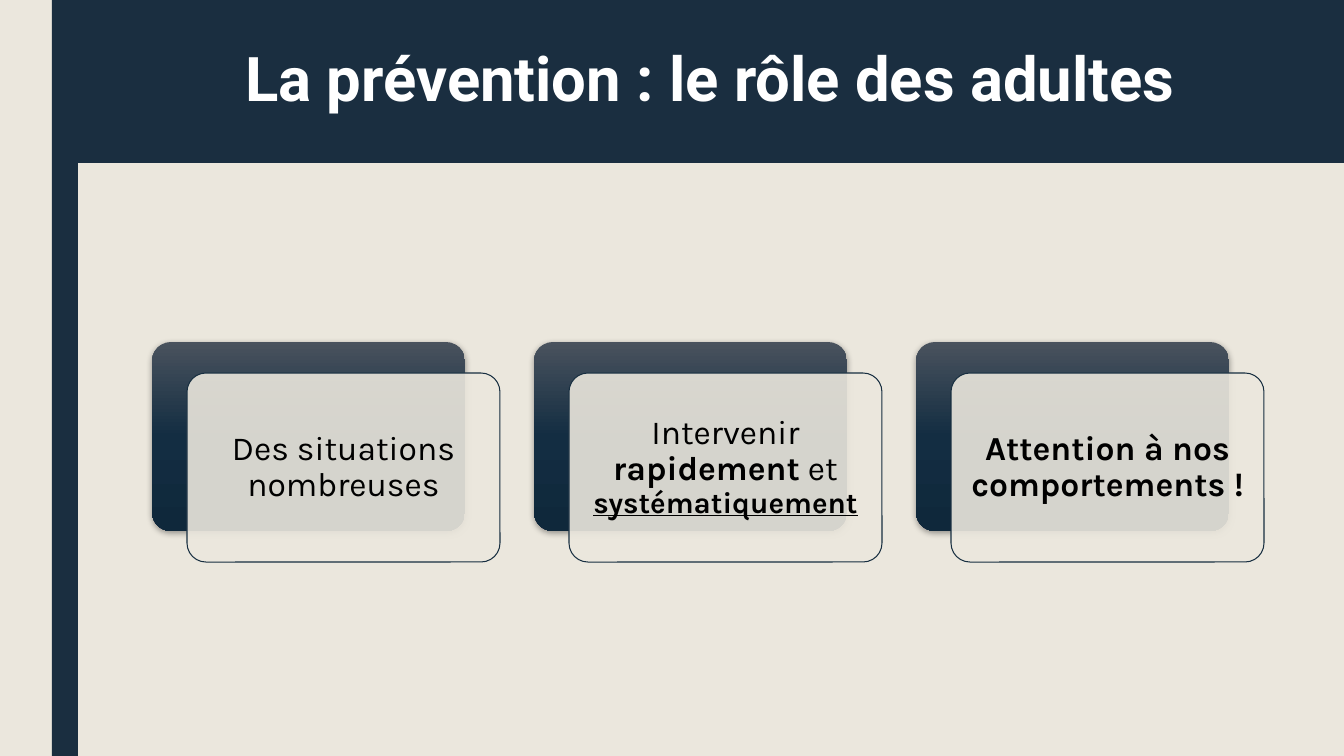
from dataclasses import dataclass

from lxml import etree
from pptx import Presentation
from pptx.dml.color import RGBColor
from pptx.enum.shapes import MSO_SHAPE
from pptx.enum.text import MSO_ANCHOR, MSO_AUTO_SIZE, PP_ALIGN
from pptx.oxml.ns import qn
from pptx.util import Emu, Pt

RECTANGLE = MSO_SHAPE.RECTANGLE
ROUNDED = MSO_SHAPE.ROUNDED_RECTANGLE
MIDDLE = MSO_ANCHOR.MIDDLE
CENTER = PP_ALIGN.CENTER
NO_AUTOFIT = MSO_AUTO_SIZE.NONE

EMU_PER_PX = 914400 / 100.8
SLIDE_WIDTH, SLIDE_HEIGHT = 1344, 756
TITLE_ONLY_LAYOUT = 5


@dataclass(frozen=True)
class Theme:
    background: str = "EBE7DD"
    band: str = "1A2E40"
    outline: str = "172E40"
    title_text: str = "FFFFFF"
    body_text: str = "000000"
    shadow: str = "000000"
    gradient: tuple = ((0, "49525D"), (50, "132D42"), (100, "0F283B"))
    title_font: str = "Roboto"
    body_font: str = "Karla"
    title_size: int = 44
    body_size: int = 24
    small_size: int = 21


THEME = Theme()

# Card layout, in px
CARD_LEFT, CARD_TOP = 152, 342
CARD_WIDTH, CARD_HEIGHT = 313, 189
CARD_PITCH = 382
FRONT_SHIFT_X, FRONT_SHIFT_Y = 35, 31
TEXT_INSET = 10

# Each card is a list of runs: text, size, bold, underline
CARDS = [
    [("Des situations nombreuses", THEME.body_size, False, False)],
    [
        ("Intervenir ", THEME.body_size, False, False),
        ("rapidement", THEME.body_size, True, False),
        (" et ", THEME.body_size, False, False),
        ("systématiquement", THEME.small_size, True, True),
    ],
    [("Attention à nos comportements !", THEME.body_size, True, False)],
]


def px(value):
    return Emu(round(value * EMU_PER_PX))


def rgb(color):
    return RGBColor.from_string(color)


def fill_solid(shape, color):
    shape.fill.solid()
    shape.fill.fore_color.rgb = rgb(color)


def format_run(run, font_name, size, color, bold, underline=False):
    font = run.font
    font.name = font_name
    font.size = Pt(size)
    font.color.rgb = rgb(color)
    font.bold = bold
    font.underline = underline


def add_plain_shape(shapes, kind, left, top, width, height):
    shape = shapes.add_shape(kind, px(left), px(top), px(width), px(height))
    shape.shadow.inherit = False
    shape.line.fill.background()
    if kind == ROUNDED:
        shape.adjustments[0] = 0.1
    return shape


def add_color_element(parent, color, opacity=100):
    element = etree.SubElement(parent, qn("a:srgbClr"), val=color)
    if opacity < 100:
        etree.SubElement(element, qn("a:alpha"), val=str(opacity * 1000))


def fill_gradient(shape, stops):
    shape.fill.gradient()
    shape.fill.gradient_angle = 270
    stop_list = shape.element.spPr.find(".//" + qn("a:gsLst"))
    for stop in list(stop_list):
        stop_list.remove(stop)
    for position, color in stops:
        stop = etree.SubElement(stop_list, qn("a:gs"), pos=str(position * 1000))
        add_color_element(stop, color)


def add_soft_shadow(shape):
    effects = shape.element.spPr.find(qn("a:effectLst"))
    shadow = etree.SubElement(
        effects, qn("a:outerShdw"), blurRad=str(Pt(4.5)), dist=str(Pt(1.5)),
        dir="5400000", algn="ctr", rotWithShape="0")
    add_color_element(shadow, THEME.shadow, 35)


def set_opacity(shape, percent):
    color = shape.element.spPr.find(qn("a:solidFill")).find(qn("a:srgbClr"))
    etree.SubElement(color, qn("a:alpha"), val=str(percent * 1000))


def add_title(slide, text):
    title = slide.shapes.title
    title.left, title.top = px(77), px(0)
    title.width, title.height = px(1267), px(163)
    fill_solid(title, THEME.band)
    text_frame = title.text_frame
    text_frame.text = text
    text_frame.word_wrap = True
    text_frame.auto_size = NO_AUTOFIT
    text_frame.vertical_anchor = MIDDLE
    paragraph = text_frame.paragraphs[0]
    paragraph.alignment = CENTER
    paragraph.line_spacing = 0.89
    format_run(paragraph.runs[0], THEME.title_font, THEME.title_size,
               THEME.title_text, True)


def write_card_text(shape, runs):
    text_frame = shape.text_frame
    text_frame.word_wrap = True
    text_frame.vertical_anchor = MIDDLE
    text_frame.margin_left = text_frame.margin_right = px(TEXT_INSET)
    text_frame.margin_top = text_frame.margin_bottom = px(TEXT_INSET)
    paragraph = text_frame.paragraphs[0]
    paragraph.alignment = CENTER
    paragraph.line_spacing = 0.9
    for text, size, bold, underline in runs:
        run = paragraph.add_run()
        run.text = text
        format_run(run, THEME.body_font, size, THEME.body_text, bold, underline)


def add_card(shapes, left, runs):
    # Dark plate behind
    plate = add_plain_shape(shapes, ROUNDED, left, CARD_TOP,
                            CARD_WIDTH, CARD_HEIGHT)
    fill_gradient(plate, THEME.gradient)
    add_soft_shadow(plate)

    # Translucent label in front
    label = add_plain_shape(shapes, ROUNDED, left + FRONT_SHIFT_X,
                            CARD_TOP + FRONT_SHIFT_Y, CARD_WIDTH, CARD_HEIGHT)
    fill_solid(label, THEME.background)
    set_opacity(label, 90)
    label.line.color.rgb = rgb(THEME.outline)
    label.line.width = Pt(0.75)
    write_card_text(label, runs)


def main():
    presentation = Presentation()
    presentation.slide_width = px(SLIDE_WIDTH)
    presentation.slide_height = px(SLIDE_HEIGHT)
    slide = presentation.slides.add_slide(
        presentation.slide_layouts[TITLE_ONLY_LAYOUT])
    fill_solid(slide.background, THEME.background)

    # Title band and side stripe
    add_title(slide, "La prévention : le rôle des adultes")
    stripe = add_plain_shape(slide.shapes, RECTANGLE, 52, 0, 26, SLIDE_HEIGHT)
    fill_solid(stripe, THEME.band)

    # Row of cards
    card_row = slide.shapes.add_group_shape()
    for index, runs in enumerate(CARDS):
        add_card(card_row.shapes, CARD_LEFT + index * CARD_PITCH, runs)

    presentation.save("out.pptx")


if __name__ == "__main__":
    main()
